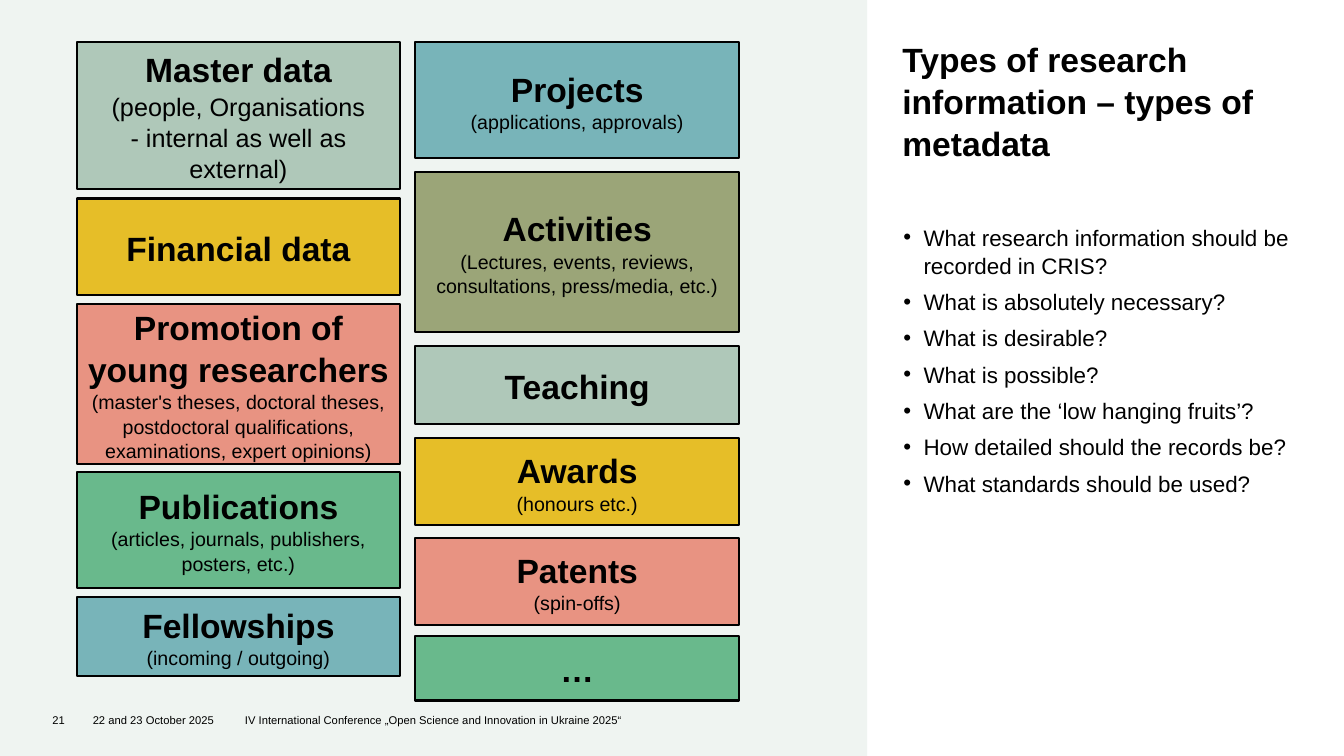
from lxml.etree import SubElement
from pptx import Presentation
from pptx.dml.color import RGBColor
from pptx.enum.shapes import MSO_SHAPE
from pptx.enum.text import MSO_ANCHOR, PP_ALIGN
from pptx.oxml.ns import qn
from pptx.util import Inches, Pt

SAGE, YELLOW, CORAL = "AFC8B9", "E6BE28", "E89382"
GREEN, BLUE, OLIVE = "69B98C", "78B4B9", "9BA578"
LINE_SPACING = 1.04


def rgb(hex_colour):
    return RGBColor.from_string(hex_colour)


def add_text(left, top, width, height, lines, size, bold=False):
    """Add a text box with one paragraph per line and return its paragraphs."""
    frame = slide.shapes.add_textbox(
        Inches(left), Inches(top), Inches(width), Inches(height)).text_frame
    frame.word_wrap = True
    frame.margin_left = frame.margin_right = frame.margin_top = 0
    frame.margin_bottom = Inches(0.05)
    frame.text = "\n".join(lines)
    for paragraph in frame.paragraphs:
        paragraph.line_spacing = LINE_SPACING
        for run in paragraph.runs:
            run.font.name = "Arial"
            run.font.size = Pt(size)
            run.font.bold = bold
            run.font.color.rgb = rgb("000000")
    return frame.paragraphs


presentation = Presentation()
presentation.slide_width = Inches(13.33)
presentation.slide_height = Inches(7.5)
slide = presentation.slides.add_slide(presentation.slide_layouts[6])

panel = slide.shapes.add_shape(
    MSO_SHAPE.RECTANGLE, 0, 0, Inches(8.6), Inches(7.5))
panel.shadow.inherit = False
panel.fill.solid()
panel.fill.fore_color.rgb = rgb("EFF4F1")
panel.line.fill.background()

add_text(8.95, 0.37, 3.86, 0.93,
         ["Types of research information – types of metadata"], 24, bold=True)

questions = add_text(8.96, 2.21, 3.85, 3.87, [
    "What research information should be recorded in CRIS?",
    "What is absolutely necessary?",
    "What is desirable?",
    "What is possible?",
    "What are the ‘low hanging fruits’?",
    "How detailed should the records be?",
    "What standards should be used?",
], 16)
for question in questions:
    question.space_after = Pt(6)
    properties = question._p.get_or_add_pPr()
    properties.set("marL", str(Inches(0.2)))
    properties.set("indent", str(-Inches(0.2)))
    SubElement(properties, qn("a:buFont")).set("typeface", "Arial")
    SubElement(properties, qn("a:buChar")).set("char", "•")

# Per column: left edge, then top, height, fill, heading, details, details size
columns = [
    (0.76, [
        (0.42, 1.46, SAGE, "Master data",
         "(people, Organisations\v- internal as well as external)", 18),
        (1.97, 0.96, YELLOW, "Financial data", "", 14),
        (3.02, 1.58, CORAL, "Promotion of young researchers",
         "(master's theses, doctoral theses, postdoctoral qualifications, "
         "examinations, expert opinions)", 14),
        (4.68, 1.15, GREEN, "Publications",
         "(articles, journals, publishers, posters, etc.)", 14),
        (5.92, 0.79, BLUE, "Fellowships", "(incoming / outgoing)", 14),
    ]),
    (4.12, [
        (0.42, 1.15, BLUE, "Projects", "(applications, approvals)", 14),
        (1.71, 1.58, OLIVE, "Activities",
         "(Lectures, events, reviews, consultations, press/media, etc.)", 14),
        (3.43, 0.78, SAGE, "Teaching", "", 14),
        (4.35, 0.86, YELLOW, "Awards", "(honours etc.)", 14),
        (5.34, 0.86, CORAL, "Patents", "(spin-offs)", 14),
        (6.31, 0.64, GREEN, "…", "", 14),
    ]),
]
for left, categories in columns:
    for top, height, fill, heading, details, details_size in categories:
        category = slide.shapes.add_shape(
            MSO_SHAPE.RECTANGLE,
            Inches(left), Inches(top), Inches(3.21), Inches(height))
        category.shadow.inherit = False
        category.fill.solid()
        category.fill.fore_color.rgb = rgb(fill)
        category.line.color.rgb = rgb("000000")
        category.line.width = Pt(1.5)
        category.text_frame.word_wrap = True
        category.text_frame.vertical_anchor = MSO_ANCHOR.MIDDLE
        label = category.text_frame.paragraphs[0]
        label.text = f"{heading}\v{details}" if details else heading
        label.alignment = PP_ALIGN.CENTER
        label.line_spacing = LINE_SPACING
        for position, run in enumerate(label.runs):
            run.font.name = "Arial"
            run.font.size = Pt(24 if position == 0 else details_size)
            run.font.bold = position == 0
            run.font.color.rgb = rgb("000000")

footer = [
    (0.52, 0.39, "21"),
    (0.92, 1.51, "22 and 23 October 2025"),
    (2.43, 7.92,
     "IV International Conference „Open Science and Innovation in Ukraine 2025“"),
]
for left, width, wording in footer:
    add_text(left, 7.07, width, 0.16, [wording], 8)

presentation.save("out.pptx")
